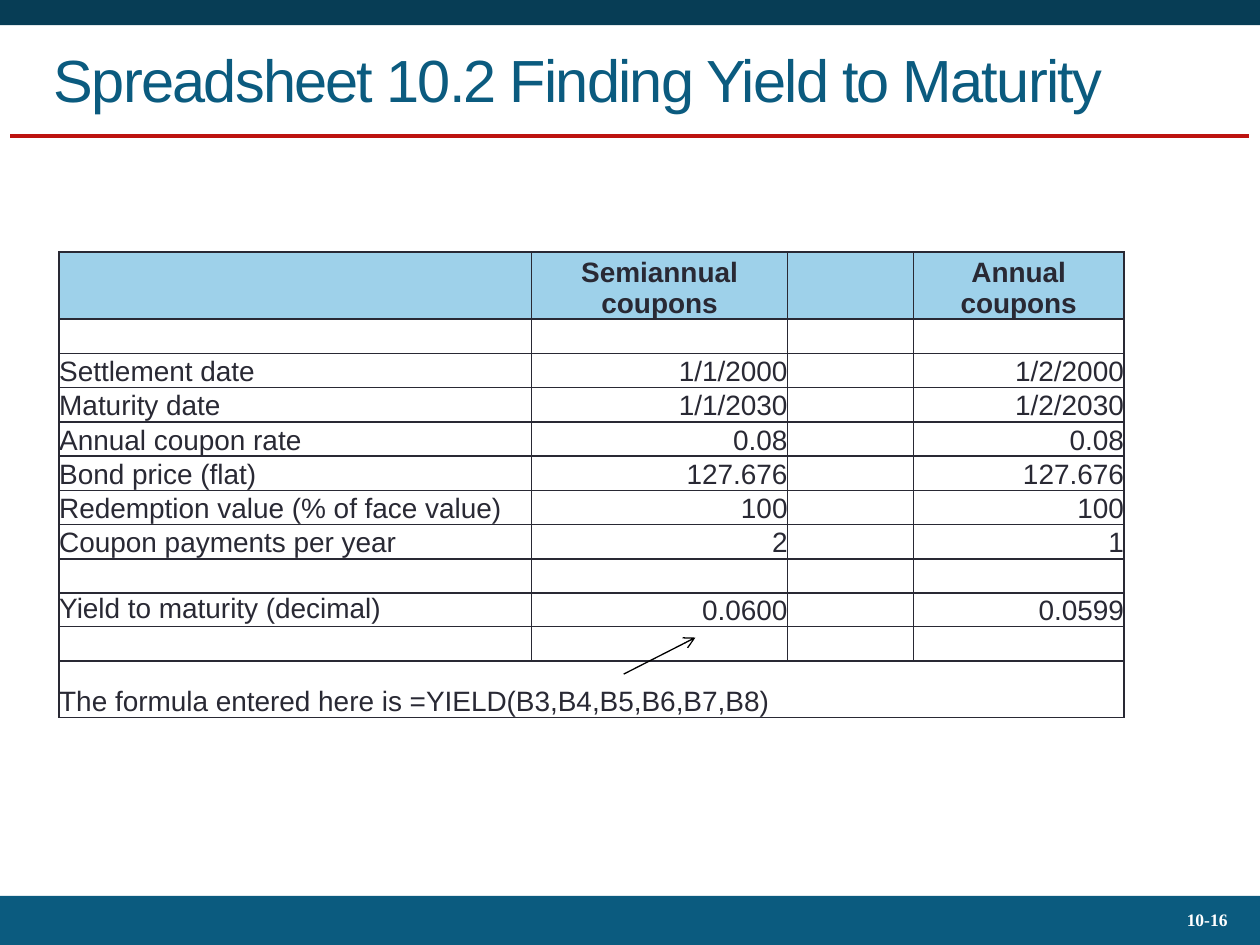
from lxml.etree import SubElement
from pptx import Presentation
from pptx.dml.color import RGBColor
from pptx.enum.shapes import MSO_CONNECTOR, MSO_SHAPE
from pptx.enum.text import MSO_ANCHOR, PP_ALIGN
from pptx.oxml import parse_xml
from pptx.oxml.ns import nsdecls, qn
from pptx.util import Inches, Pt

COLS, ROWS = 100, 75
NAVY, TEAL, RED, SKY, INK = "073D55", "0B5B7F", "BD130F", "9ED1EA", "292934"
LEFT, CENTER, RIGHT = PP_ALIGN.LEFT, PP_ALIGN.CENTER, PP_ALIGN.RIGHT

HEADERS = ["", "Semiannual coupons", "", "Annual coupons"]
BODY = [
    [""] * 4,
    ["Settlement date", "1/1/2000", "", "1/2/2000"],
    ["Maturity date", "1/1/2030", "", "1/2/2030"],
    ["Annual coupon rate", "0.08", "", "0.08"],
    ["Bond price (flat)", "127.676", "", "127.676"],
    ["Redemption value (% of face value)", "100", "", "100"],
    ["Coupon payments per year", "2", "", "1"],
    [""] * 4,
    ["Yield to maturity (decimal)", "0.0600", "", "0.0599"],
    [""] * 4,
]
FORMULA = ["The formula entered here is =YIELD(B3,B4,B5,B6,B7,B8)", "", "", ""]
COL_WIDTHS = [37.5, 20.3, 10, 16.7]
ROW_HEIGHTS = [5] + [2.72] * 8 + [2.5, 2.72, 4.5]


def rgb(value):
    return RGBColor.from_string(value)


def apply(target, values):
    for name, value in values.items():
        setattr(target, name, value)


class Deck:
    """Holds the style and the current slide; lengths are grid columns and rows."""

    def __init__(self):
        self.prs = Presentation()
        apply(self.prs, {"slide_width": Inches(10), "slide_height": Inches(7.5)})
        self.s = self.prs.slides.add_slide(self.prs.slide_layouts[6])
        self.font = "Arial"

    def x(self, cols):
        return round(self.prs.slide_width * cols / COLS)

    def y(self, rows):
        return round(self.prs.slide_height * rows / ROWS)

    def box(self, left, top, width, height):
        return self.x(left), self.y(top), self.x(width), self.y(height)

    def fill_paragraph(self, p, text, size, color, align=LEFT, bold=False, font=None):
        p.alignment = align
        if not text:
            SubElement(p._p, qn("a:endParaRPr"), sz=str(size * 100))
            return None
        r = p.add_run()
        r.text = text
        apply(r.font, {"size": Pt(size), "bold": bold, "name": font or self.font})
        r.font.color.rgb = rgb(color)
        return r

    def band(self, top, height, color):
        sp = self.s.shapes.add_shape(MSO_SHAPE.RECTANGLE, *self.box(0, top, COLS, height))
        sp.shadow.inherit = False
        sp.fill.solid()
        sp.fill.fore_color.rgb = rgb(color)
        sp.line.fill.background()

    def text(self, place, text, size, color, spacing=0, line_spacing=1.0, **style):
        """Spacing is the gap between letters in hundredths of a point."""
        tf = self.s.shapes.add_textbox(*self.box(*place)).text_frame
        apply(tf, {"word_wrap": True, "vertical_anchor": MSO_ANCHOR.MIDDLE})
        p = tf.paragraphs[0]
        p.line_spacing = line_spacing
        r = self.fill_paragraph(p, text, size, color, **style)
        if spacing:
            r.font._element.set("spc", str(spacing))

    def line(self, start, end, color, width, arrow=False):
        cx = self.s.shapes.add_connector(
            MSO_CONNECTOR.STRAIGHT, self.x(start[0]), self.y(start[1]),
            self.x(end[0]), self.y(end[1]))
        cx.line.color.rgb = rgb(color)
        cx.line.width = Pt(width)
        if arrow:
            SubElement(cx.line._get_or_add_ln(), qn("a:tailEnd"), type="arrow")
        SubElement(cx._element.spPr, qn("a:effectLst"))

    def cell(self, cell, text, fill, align, bold, anchor):
        margins = ["margin_left", "margin_right", "margin_top", "margin_bottom"]
        apply(cell, dict.fromkeys(margins, 0))
        cell.vertical_anchor = anchor
        if fill:
            cell.fill.solid()
            cell.fill.fore_color.rgb = rgb(fill)
        else:
            cell.fill.background()
        self.fill_paragraph(cell.text_frame.paragraphs[0], text, 16, INK, align, bold)
        tcPr = cell._tc.get_or_add_tcPr()
        for i, side in enumerate("LRTB"):
            tcPr.insert(i, parse_xml(
                f'<a:ln{side} {nsdecls("a")} w="{Pt(1)}"><a:solidFill>'
                f'<a:srgbClr val="{INK}"/></a:solidFill></a:ln{side}>'))

    def table(self, left, top, rows, widths, heights):
        place = self.box(left, top, sum(widths), sum(heights))
        tbl = self.s.shapes.add_table(len(rows), len(widths), *place).table
        apply(tbl, {"first_row": False, "horz_banding": False})
        for col, width in zip(tbl.columns, widths):
            col.width = self.x(width)
        for row, height in zip(tbl.rows, heights):
            row.height = self.y(height)
        for i, row in enumerate(rows):
            header = i == 0
            for j, text in enumerate(row):
                align = CENTER if header else RIGHT if j else LEFT
                top_label = text.startswith("Yield")
                anchor = MSO_ANCHOR.TOP if top_label else MSO_ANCHOR.BOTTOM
                self.cell(tbl.cell(i, j), text, SKY if header else None,
                          align, header, anchor)
        last = len(rows) - 1
        tbl.cell(last, 0).merge(tbl.cell(last, len(widths) - 1))


def main():
    deck = Deck()
    deck.band(0, 2, NAVY)
    deck.line((0.8, 10.8), (99.1, 10.8), RED, 2.25)
    deck.band(71.1, 3.9, TEAL)
    deck.text((86.7, 71.3, 11.7, 3.6), "10-16", 10, "FFFFFF", line_spacing=0.93,
              align=RIGHT, bold=True, font="Times New Roman")
    deck.text((3.3, 1.7, 93.5, 9.1), "Spreadsheet 10.2 Finding Yield to Maturity",
              34, TEAL, spacing=-100)
    deck.table(4.7, 20, [HEADERS, *BODY, FORMULA], COL_WIDTHS, ROW_HEIGHTS)
    deck.line((49.5, 53.5), (55.2, 50.6), "000000", 0.75, arrow=True)
    deck.prs.save("out.pptx")


if __name__ == "__main__":
    main()
